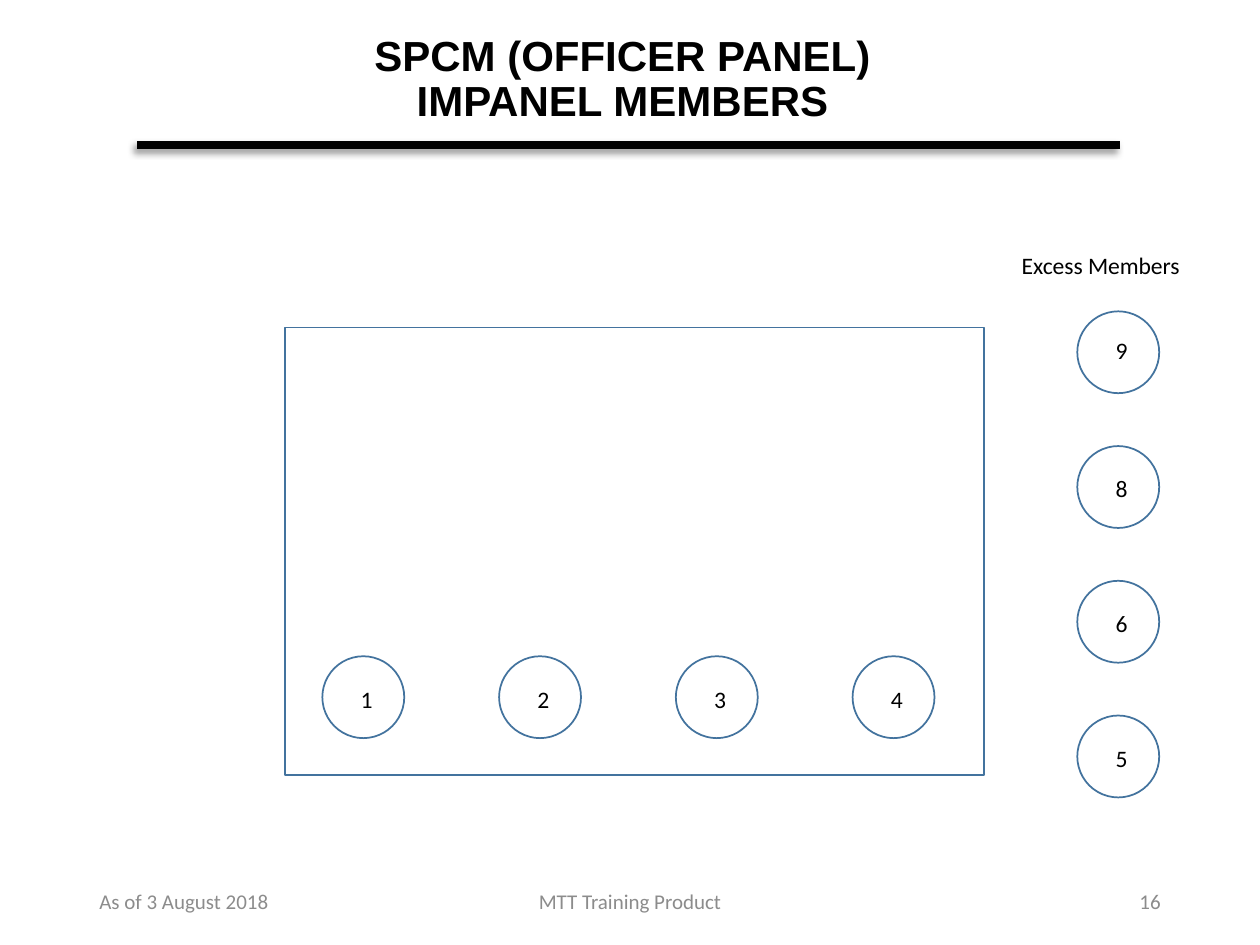
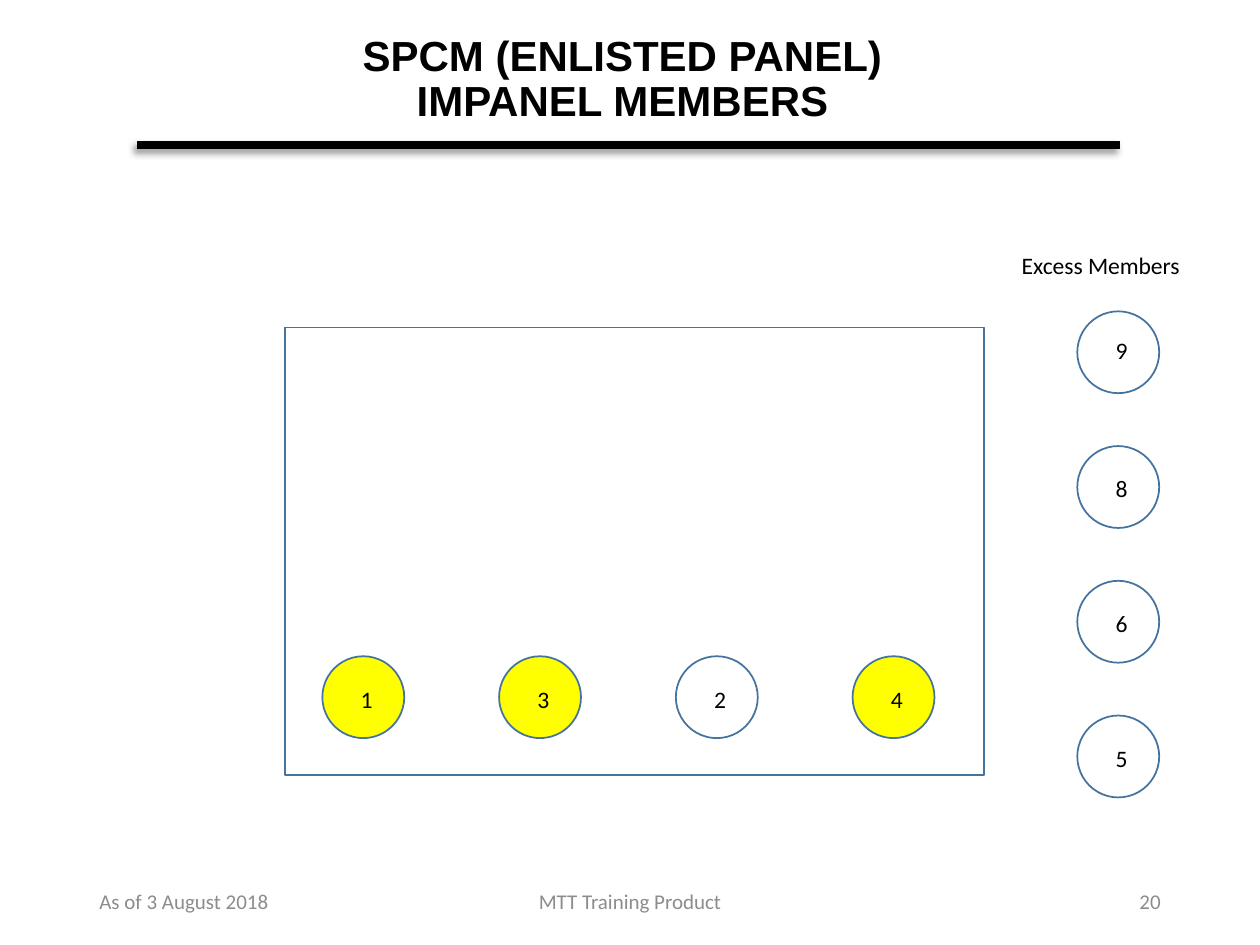
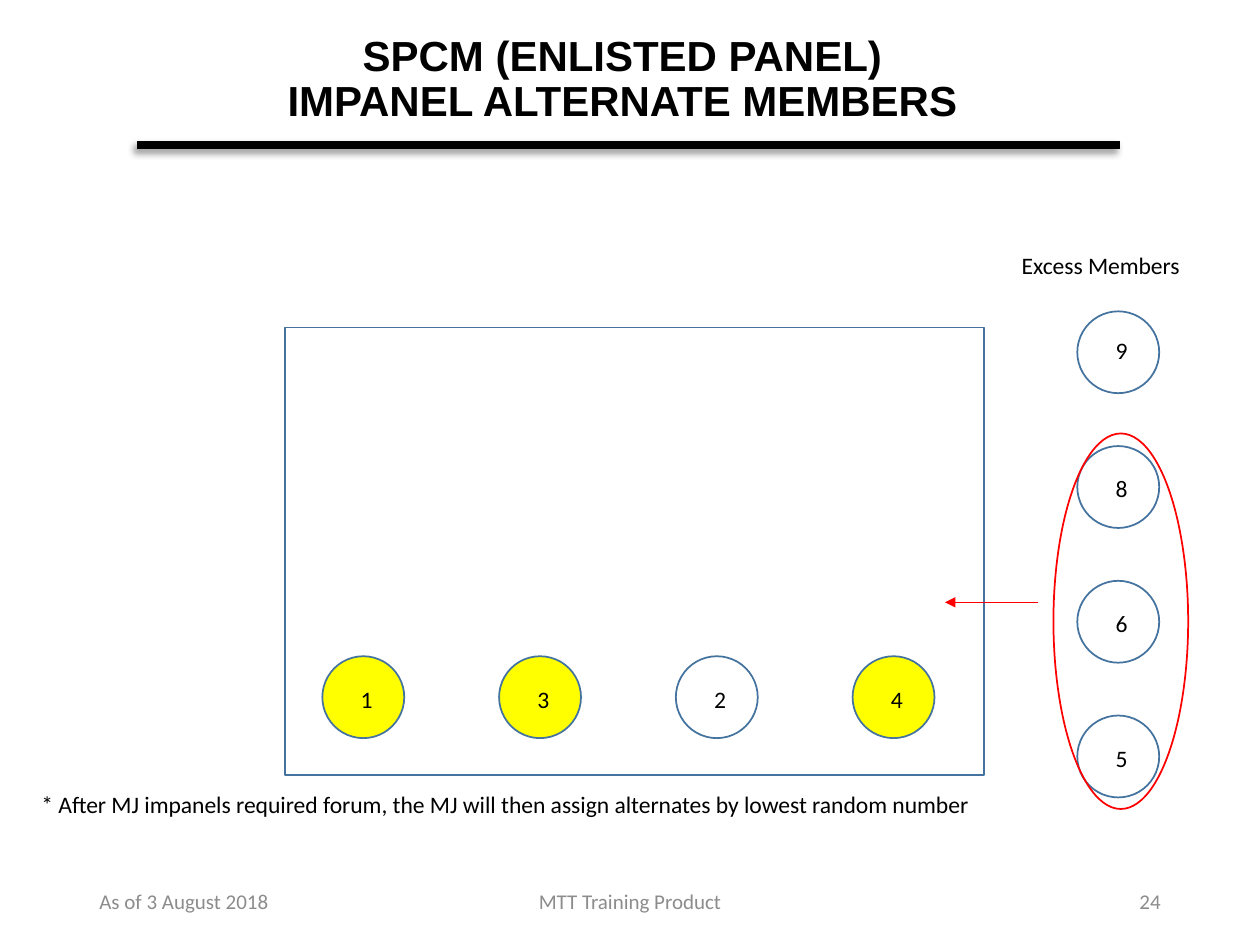
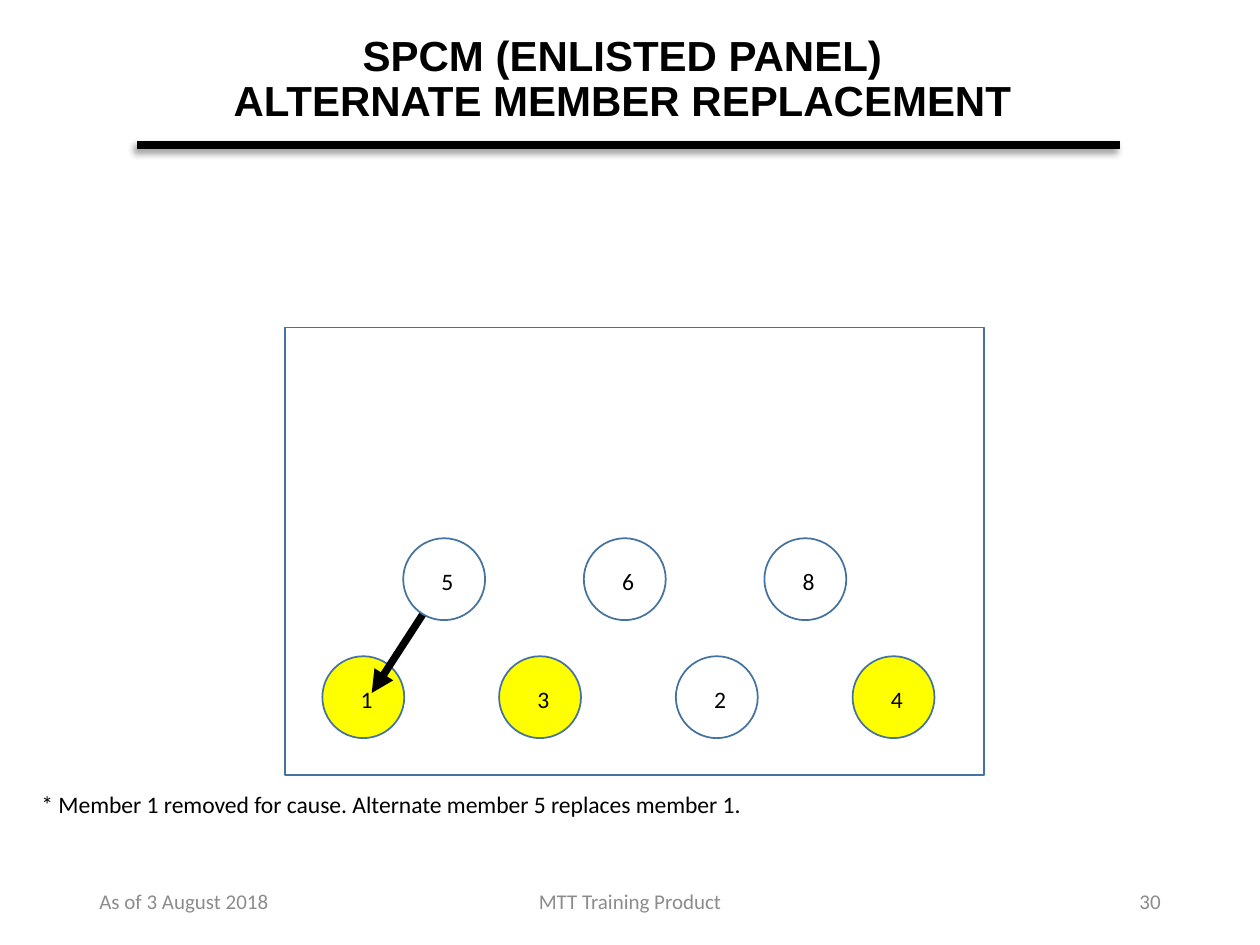
from lxml import etree
from pptx import Presentation
from pptx.dml.color import RGBColor
from pptx.enum import shapes, text
from pptx.oxml import ns
from pptx.util import Pt

# Shared look
BLACK, GREY, WHITE = "000000", "8C8C8C", "FFFFFF"
BLUE, YELLOW, RED = "43739E", "FFFF00", "FF0000"
HEADING_FONT, BODY_FONT = "Arial", "Calibri"
LEFT, CENTER, RIGHT = text.PP_ALIGN.LEFT, text.PP_ALIGN.CENTER, text.PP_ALIGN.RIGHT

# Seating geometry, in points
PANEL = (162.72, 187.2, 399.6, 255.6)
SEAT = 46.8
FRONT_LEFT, FRONT_TOP, FRONT_STEP = 184.2, 375, 101
BACK_LEFT, BACK_TOP, BACK_STEP = 230.4, 307.6, 103.2
EXCESS_LEFT, EXCESS_TOP, EXCESS_STEP = 615.6, 177.9, 77

# Members in seating order, with the fill of each circle
OFFICERS = {"1": WHITE, "2": WHITE, "3": None, "4": WHITE}
ENLISTED = {"1": YELLOW, "3": YELLOW, "2": None, "4": YELLOW}
EXCESS = {"9": None, "8": None, "6": None, "5": WHITE}
ALTERNATES = {"5": WHITE, "6": None, "8": None}


def color(hex_code):
    return RGBColor.from_string(hex_code)


def add_text(slide, content, left, top, width, height, size=13.5, font=BODY_FONT,
             ink=BLACK, bold=False, align=LEFT, spacing=None, middle=False, wrap=False):
    box = slide.shapes.add_textbox(Pt(left), Pt(top), Pt(width), Pt(height))
    frame = box.text_frame
    frame.word_wrap = wrap
    frame.vertical_anchor = text.MSO_ANCHOR.MIDDLE if middle else text.MSO_ANCHOR.TOP
    paragraph = frame.paragraphs[0]
    paragraph.alignment = align
    paragraph.line_spacing = spacing
    for number, line in enumerate(content.splitlines()):
        if number:
            paragraph.add_line_break()
        run = paragraph.add_run()
        run.text = line
        run.font.size, run.font.name, run.font.bold = Pt(size), font, bold
        run.font.color.rgb = color(ink)


def add_outline(slide, kind, left, top, width, height, fill=None, line=BLUE):
    outline = slide.shapes.add_shape(kind, Pt(left), Pt(top), Pt(width), Pt(height))
    outline.shadow.inherit = False
    if fill:
        outline.fill.solid()
        outline.fill.fore_color.rgb = color(fill)
    else:
        outline.fill.background()
    outline.line.color.rgb = color(line)
    outline.line.width = Pt(1)


def add_line(slide, start, end, ink=BLACK, weight=4.25, arrow=False, shadow=False):
    points = [Pt(value) for value in (*start, *end)]
    line = slide.shapes.add_connector(shapes.MSO_CONNECTOR.STRAIGHT, *points)
    line.line.color.rgb = color(ink)
    line.line.width = Pt(weight)
    if arrow:
        etree.SubElement(line.line._get_or_add_ln(), ns.qn("a:tailEnd"), type="triangle")
    effects = etree.SubElement(line._element.spPr, ns.qn("a:effectLst"))
    if shadow:
        cast = etree.SubElement(effects, ns.qn("a:outerShdw"), blurRad=str(Pt(4)),
                                dist=str(Pt(3)), dir="8100000", rotWithShape="0")
        tint = etree.SubElement(cast, ns.qn("a:srgbClr"), val=BLACK)
        etree.SubElement(tint, ns.qn("a:alpha"), val="40000")


def add_members(slide, members, left, top, step_x=0, step_y=0):
    """Numbered circles, placed at equal steps."""
    for place, (number, fill) in enumerate(members.items()):
        x, y = left + place * step_x, top + place * step_y
        add_outline(slide, shapes.MSO_SHAPE.OVAL, x, y, SEAT, SEAT, fill)
        drop = 10.8 if number == "9" else 12.6
        add_text(slide, number, x + 14.8, y + drop, 22.3, 23.7)


def add_excess(slide):
    add_text(slide, "Excess Members", 576.7, 139.7, 106.6, 23.7)
    add_members(slide, EXCESS, EXCESS_LEFT, EXCESS_TOP, step_y=EXCESS_STEP)


def add_note(slide, content, width):
    add_text(slide, content, 16.6, 447.8, width, 23.7)


def add_panel_slide(deck, title, page, members):
    """Title, rule, footer, and the panel box with its front row."""
    slide = deck.slides.add_slide(deck.slide_layouts[6])
    add_line(slide, (78.5, 82.8), (640, 82.8), shadow=True)
    add_text(slide, title, 74.9, 16.6, 561.6, 58.3, size=24, font=HEADING_FONT,
             bold=True, align=CENTER, spacing=0.9, middle=True, wrap=True)
    for content, left, width, align in (("As of 3 August 2018", 49.7, 162, LEFT),
                                        ("MTT Training Product", 238.3, 243.4, CENTER),
                                        (page, 508.3, 162, RIGHT)):
        add_text(slide, content, left, 500.4, width, 28.8, size=12, ink=GREY,
                 align=align, middle=True, wrap=True)
    add_outline(slide, shapes.MSO_SHAPE.RECTANGLE, *PANEL)
    add_members(slide, members, FRONT_LEFT, FRONT_TOP, step_x=FRONT_STEP)
    return slide


def main():
    deck = Presentation()
    deck.slide_width, deck.slide_height = Pt(720), Pt(540)

    # Officer panel
    officers = add_panel_slide(deck, "SPCM (OFFICER PANEL)\nIMPANEL MEMBERS", "16", OFFICERS)
    add_excess(officers)

    # Enlisted panel
    enlisted = add_panel_slide(deck, "SPCM (ENLISTED PANEL)\nIMPANEL MEMBERS", "20", ENLISTED)
    add_excess(enlisted)

    # Choice of alternates
    choice = add_panel_slide(
        deck, "SPCM (ENLISTED PANEL)\nIMPANEL ALTERNATE MEMBERS", "24", ENLISTED)
    add_excess(choice)
    add_note(choice, "* After MJ impanels required forum, the MJ will then assign "
                     "alternates by lowest random number", 593.3)
    add_outline(choice, shapes.MSO_SHAPE.OVAL, 602, 247.7, 77, 214.6, line=RED)
    add_line(choice, (593.3, 344.2), (540, 344.2), ink=RED, weight=0.5, arrow=True)

    # Replacement by an alternate
    replacement = add_panel_slide(
        deck, "SPCM (ENLISTED PANEL)\nALTERNATE MEMBER REPLACEMENT", "30", ENLISTED)
    add_line(replacement, (249.8, 338.4), (212.4, 396), arrow=True)
    add_members(replacement, ALTERNATES, BACK_LEFT, BACK_TOP, step_x=BACK_STEP)
    add_note(replacement, "* Member 1 removed for cause. Alternate member 5 replaces "
                          "member 1.", 452.2)

    deck.save("out.pptx")


if __name__ == "__main__":
    main()
